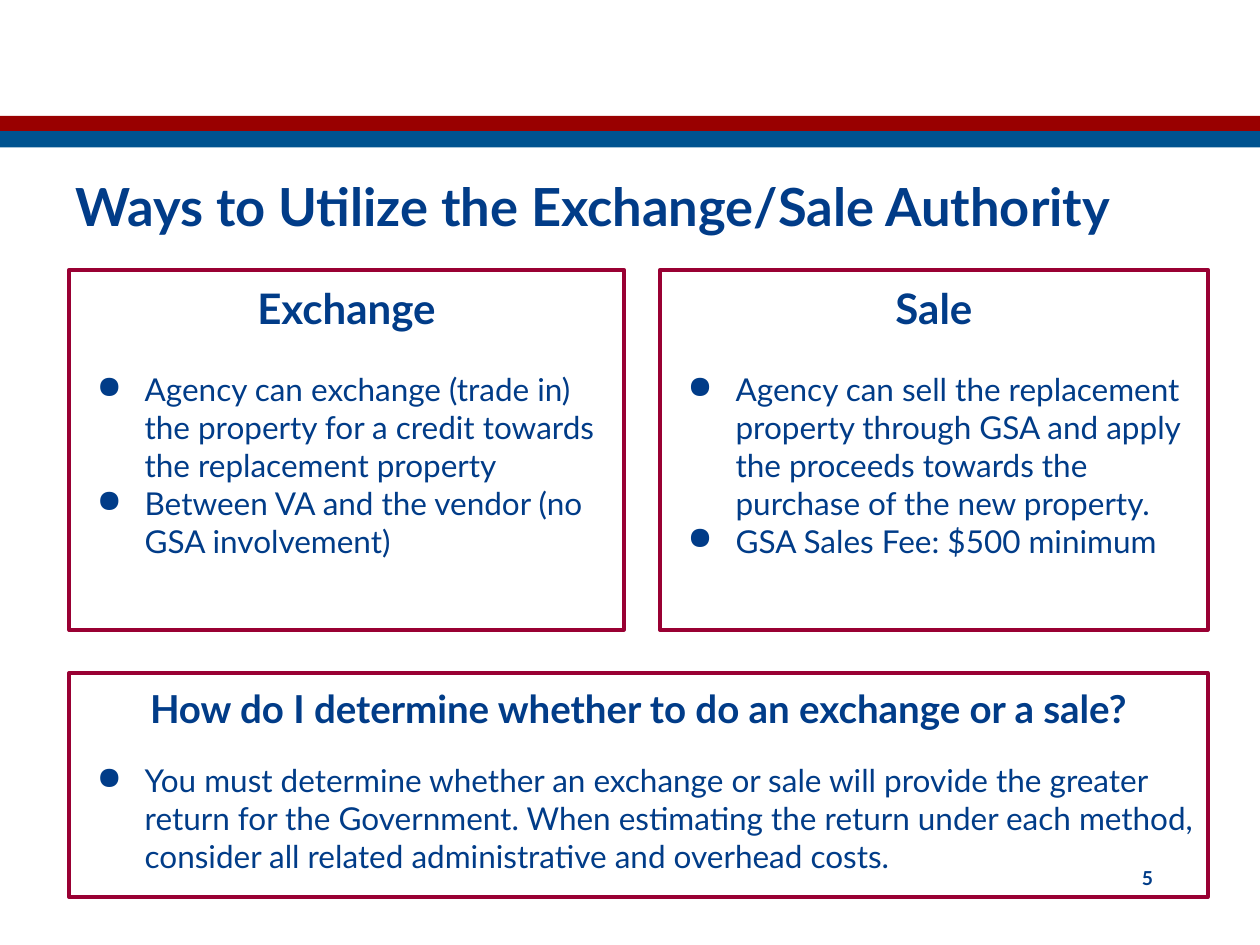
from dataclasses import dataclass

from lxml.etree import SubElement
from pptx import Presentation
from pptx.dml.color import RGBColor
from pptx.enum.shapes import MSO_SHAPE
from pptx.enum.text import MSO_ANCHOR, PP_ALIGN
from pptx.oxml.ns import qn
from pptx.shapes.autoshape import Shape
from pptx.slide import Slide
from pptx.text.text import TextFrame, _Paragraph
from pptx.util import Inches, Pt


@dataclass(frozen=True)
class Theme:
    """Colours, font and type sizes of the deck."""
    navy: str = "013C88"
    red: str = "990000"
    blue: str = "005390"
    crimson: str = "990033"
    font: str = "Lato"
    title: float = 30
    heading: float = 24
    question: float = 22
    body: float = 18
    number: float = 11
    outline: float = 2.25
    leading: float = 1.2


@dataclass(frozen=True)
class Area:
    """A place on a grid of 100 columns by 75 rows."""
    column: float
    row: float
    columns: float
    rows: float

    def box(self) -> tuple[int, ...]:
        """Return left, top, width and height for a ten inch wide page."""
        return tuple(Inches(cells / COLUMNS * WIDTH)
                     for cells in (self.column, self.row, self.columns, self.rows))


@dataclass(frozen=True)
class Card:
    """An outlined box with a heading and bullets."""
    area: Area
    heading: str
    size: float
    gap: float
    bullets: tuple[str, ...]


THEME = Theme()
WIDTH, HEIGHT = 10, 7.5
COLUMNS = 100
LEFT, RIGHT = 5.5, 95.85
TOP_ROW, TOP_ROWS = 21.4, 28.6
SALE_COLUMN = 52.4

BANDS = ((9.2, THEME.red), (10.4, THEME.blue))
CARDS = (
    Card(Area(LEFT, TOP_ROW, 44, TOP_ROWS), "Exchange", THEME.heading, THEME.body, (
        "Agency can exchange (trade in) the property for a credit towards "
        "the replacement property",
        "Between VA and the vendor (no GSA involvement)",
    )),
    Card(Area(SALE_COLUMN, TOP_ROW, RIGHT - SALE_COLUMN, TOP_ROWS), "Sale",
         THEME.heading, THEME.body, (
        "Agency can sell the replacement property through GSA and apply the "
        "proceeds towards the purchase of the new property.",
        "GSA Sales Fee: $500 minimum",
    )),
    Card(Area(LEFT, 53.4, RIGHT - LEFT, 17.8),
         "How do I determine whether to do an exchange or a sale?",
         THEME.question, 14, (
        "You must determine whether an exchange or sale will provide the greater "
        "return for the Government. When estimating the return under each method, "
        "consider all related administrative and overhead costs.",
    )),
)


def write(para: _Paragraph, text: str, size: float, bold: bool,
          align: PP_ALIGN = PP_ALIGN.LEFT) -> None:
    """Add one styled run to a paragraph."""
    para.alignment = align
    span = para.add_run()
    span.text = text
    span.font.name = THEME.font
    span.font.size = Pt(size)
    span.font.bold = bold
    span.font.color.rgb = RGBColor.from_string(THEME.navy)


def add_bullet(para: _Paragraph) -> None:
    """Give a paragraph a hanging round bullet."""
    properties = para._p.get_or_add_pPr()
    properties.set("marL", str(Inches(0.5)))
    properties.set("indent", str(-Inches(0.38)))
    colour = SubElement(properties, qn("a:buClr"))
    SubElement(colour, qn("a:srgbClr"), val=THEME.navy)
    SubElement(properties, qn("a:buChar"), char="●")


def prepare(frame: TextFrame, vertical_inset: float) -> None:
    """Wrap a frame's text from the top with even insets."""
    frame.word_wrap = True
    frame.vertical_anchor = MSO_ANCHOR.TOP
    frame.margin_left = frame.margin_right = Inches(0.1)
    frame.margin_top = frame.margin_bottom = Inches(vertical_inset)


def add_rectangle(page: Slide, area: Area) -> Shape:
    """Add a rectangle without a shadow."""
    box = page.shapes.add_shape(MSO_SHAPE.RECTANGLE, *area.box())
    box.shadow.inherit = False
    return box


def add_band(page: Slide, row: float, colour: str) -> None:
    """Add a full-width coloured band."""
    band = add_rectangle(page, Area(0, row, COLUMNS, 1.3))
    band.fill.solid()
    band.fill.fore_color.rgb = RGBColor.from_string(colour)
    band.line.fill.background()


def add_label(page: Slide, area: Area, text: str, size: float,
              align: PP_ALIGN = PP_ALIGN.LEFT) -> None:
    """Add a bold single-line text box."""
    frame = page.shapes.add_textbox(*area.box()).text_frame
    prepare(frame, 0.05)
    write(frame.paragraphs[0], text, size, True, align)


def add_card(page: Slide, card: Card) -> None:
    """Add an outlined card with its heading and bullets."""
    box = add_rectangle(page, card.area)
    box.fill.background()
    box.line.color.rgb = RGBColor.from_string(THEME.crimson)
    box.line.width = Pt(THEME.outline)
    frame = box.text_frame
    prepare(frame, 0.1)
    heading = frame.paragraphs[0]
    write(heading, card.heading, card.size, True, PP_ALIGN.CENTER)
    heading.space_after = Pt(card.gap * THEME.leading)
    for text in card.bullets:
        para = frame.add_paragraph()
        add_bullet(para)
        write(para, text, THEME.body, False)


def main() -> None:
    """Build and save the slide."""
    deck = Presentation()
    deck.slide_width, deck.slide_height = Inches(WIDTH), Inches(HEIGHT)
    page = deck.slides.add_slide(deck.slide_layouts[6])
    for row, colour in BANDS:
        add_band(page, row, colour)
    add_label(page, Area(5, 13.3, 90.8, 6.1),
              "Ways to Utilize the Exchange/Sale Authority", THEME.title)
    add_label(page, Area(71.7, 68.3, 20.8, 5), "5", THEME.number, PP_ALIGN.RIGHT)
    for card in CARDS:
        add_card(page, card)
    deck.save("out.pptx")


if __name__ == "__main__":
    main()
